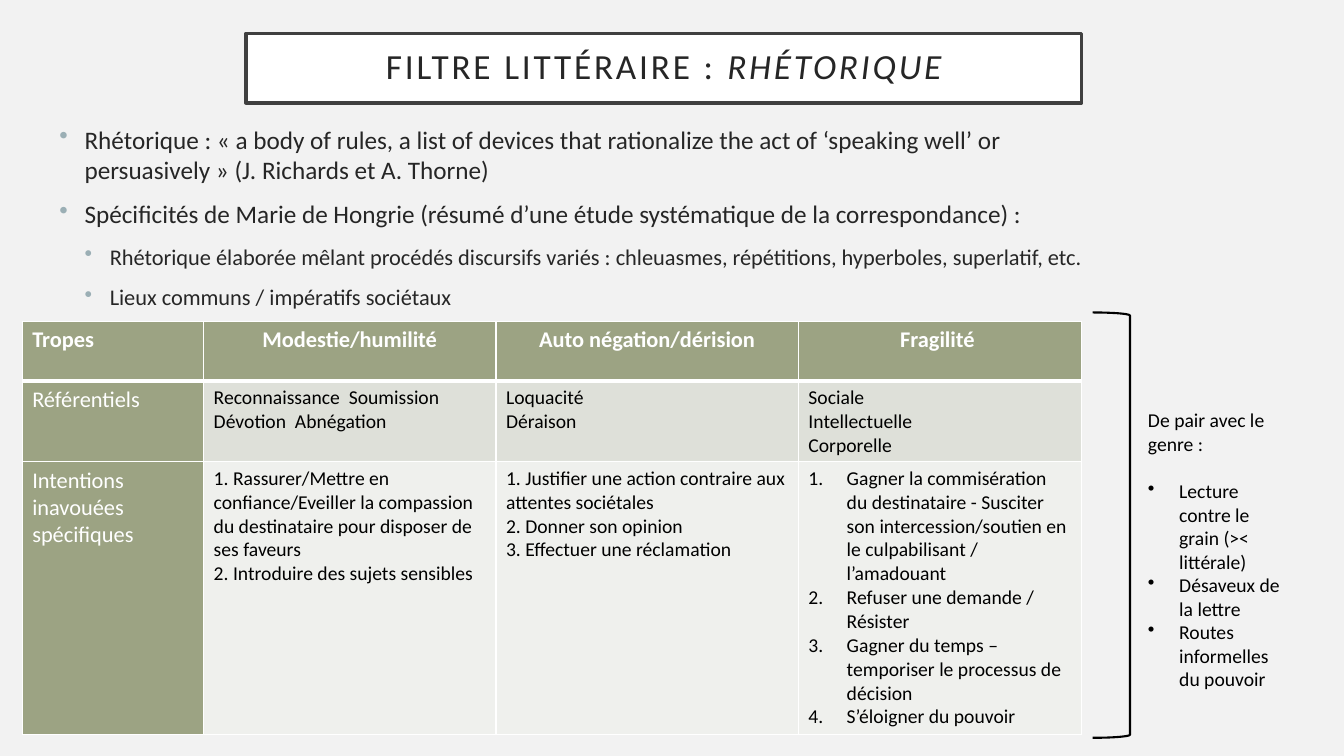
from lxml import etree
from pptx import Presentation
from pptx.dml.color import RGBColor
from pptx.enum.shapes import MSO_SHAPE
from pptx.enum.text import MSO_ANCHOR, PP_ALIGN
from pptx.oxml.ns import qn
from pptx.util import Inches, Pt

RECTANGLE, BRACKET = MSO_SHAPE.RECTANGLE, MSO_SHAPE.RIGHT_BRACKET
LEFT, CENTER = PP_ALIGN.LEFT, PP_ALIGN.CENTER
MIDDLE = MSO_ANCHOR.MIDDLE
BLANK_LAYOUT = 6
WIDTH, HEIGHT = Inches(13.33), Inches(7.5)
FONT = "Calibri"
WHITE, BLACK, INK, OUTLINE = "FFFFFF", "000000", "262626", "404040"
PAPER, BULLET, SAGE = "F2F2F2", "9BAFB5", "9CA383"
BAND_FILLS = (SAGE, "DEE0D9", "EFF0ED")
COLUMN_WEIGHTS = (1.8, 2.9, 3, 2.81)
ROW_WEIGHTS = (0.59, 0.8, 2.71)

POINTS = [
    (0, "Rhétorique : « a body of rules, a list of devices that rationalize the act of "
        "‘speaking well’ or persuasively » (J. Richards et A. Thorne)"),
    (0, "Spécificités de Marie de Hongrie (résumé d’une étude systématique de la correspondance) :"),
    (1, "Rhétorique élaborée mêlant procédés discursifs variés : chleuasmes, répétitions, "
        "hyperboles, superlatif, etc."),
    (1, "Lieux communs / impératifs sociétaux"),
]
TROPES = [
    [["Tropes"], ["Modestie/humilité"], ["Auto négation/dérision"], ["Fragilité "]],
    [["Référentiels"],
     ["Reconnaissance  Soumission  Dévotion  Abnégation"],
     ["Loquacité", "Déraison"],
     ["Sociale", "Intellectuelle", "Corporelle"]],
    [["Intentions inavouées spécifiques"],
     ["1. Rassurer/Mettre en confiance/Eveiller la compassion du destinataire pour disposer "
      "de ses faveurs",
      "2. Introduire des sujets sensibles"],
     ["1. Justifier une action contraire aux attentes sociétales",
      "2. Donner son opinion",
      "3. Effectuer une réclamation"],
     ["Gagner la commisération du destinataire - Susciter son intercession/soutien en le "
      "culpabilisant / l’amadouant",
      "Refuser une demande / Résister",
      "Gagner du temps – temporiser le processus de décision",
      "S’éloigner du pouvoir"]],
]
GENDER_READINGS = [
    "Lecture contre le grain (>< littérale)",
    "Désaveux de la lettre",
    "Routes informelles du pouvoir",
]


def color(hex_code):
    """Turn a hex string into a colour."""
    return RGBColor.from_string(hex_code)


def area(left, top, width, height):
    """Turn percentages of the slide into a box."""
    return tuple(int(share * side / 100) for share, side in
                 zip((left, top, width, height), (WIDTH, HEIGHT) * 2))


def write(paragraph, text, size=14, ink=BLACK, bold=False, italic=False, tracking=0,
          align=LEFT, before=0):
    """Add one formatted run to a paragraph."""
    paragraph.alignment = align
    paragraph.space_before = Pt(before)
    run = paragraph.add_run()
    run.text = text
    font = run.font
    font.name, font.size, font.bold, font.italic = FONT, Pt(size), bold, italic
    font.color.rgb = color(ink)
    if tracking:
        run._r.get_or_add_rPr().set("spc", str(tracking * 100))


def mark(paragraph, margin, hang, tint=BLACK, numbered=False):
    """Give a paragraph a hanging bullet or number."""
    properties = paragraph._p.get_or_add_pPr()
    properties.set("marL", str(Inches(margin)))
    properties.set("indent", str(-Inches(hang)))
    bullet_color = etree.SubElement(properties, qn("a:buClr"))
    etree.SubElement(bullet_color, qn("a:srgbClr"), val=tint)
    if numbered:
        etree.SubElement(properties, qn("a:buAutoNum"), type="arabicPeriod")
    else:
        etree.SubElement(properties, qn("a:buChar"), char="•")


def paragraphs(frame, count):
    """Return the given number of paragraphs of a wrapping text frame."""
    frame.word_wrap = True
    return [frame.paragraphs[0]] + [frame.add_paragraph() for _ in range(count - 1)]


def add_outline(slide, box, kind, line, weight, fill=None):
    """Draw a shape with a plain outline."""
    shape = slide.shapes.add_shape(kind, *box)
    shape.shadow.inherit = False
    if fill:
        shape.fill.solid()
        shape.fill.fore_color.rgb = color(fill)
    else:
        shape.fill.background()
    shape.line.color.rgb = color(line)
    shape.line.width = Pt(weight)
    return shape


def add_title(slide, box):
    """Place the framed title."""
    frame = add_outline(slide, box, RECTANGLE, OUTLINE, 2.5, WHITE).text_frame
    frame.vertical_anchor = MIDDLE
    frame.margin_left = frame.margin_right = Inches(0.2)
    frame.margin_top = frame.margin_bottom = Inches(0.2)
    heading = paragraphs(frame, 1)[0]
    heading.line_spacing = 0.9
    for text, italic in (("FILTRE LITTÉRAIRE : ", False), ("RHÉTORIQUE", True)):
        write(heading, text, size=25.2, ink=INK, italic=italic, tracking=2, align=CENTER)


def add_points(slide, box):
    """Place the two-level list of points."""
    frame = slide.shapes.add_textbox(*box).text_frame
    for paragraph, (level, text) in zip(paragraphs(frame, len(POINTS)), POINTS):
        paragraph.level = level
        write(paragraph, text, size=18 - 2 * level, ink=INK, before=10)
        mark(paragraph, 0.25 * (level + 1), 0.25, BULLET)


def add_border(cell, edge, weight):
    """Draw one white cell border."""
    line = etree.Element(qn("a:" + edge), w=str(Pt(weight)))
    fill = etree.SubElement(line, qn("a:solidFill"))
    etree.SubElement(fill, qn("a:srgbClr"), val=WHITE)
    cell._tc.get_or_add_tcPr().append(line)


def fill_cell(cell, texts, row, column):
    """Write, border and colour one cell of the tropes table."""
    header, label = row == 0, row == 0 or column == 0
    numbered = row == 2 and column == 3
    for edge in ("lnL", "lnR", "lnT", "lnB"):
        thick = (header and edge == "lnB") or (row == 1 and edge == "lnT")
        add_border(cell, edge, 3 if thick else 1)
    cell.fill.solid()
    cell.fill.fore_color.rgb = color(SAGE if label else BAND_FILLS[row])
    for paragraph, text in zip(paragraphs(cell.text_frame, len(texts)), texts):
        write(paragraph, text, size=16 if label else 14, ink=WHITE if label else BLACK,
              bold=header, align=CENTER if header and column else LEFT)
        if numbered:
            mark(paragraph, 0.38, 0.38, numbered=True)


def add_tropes(slide, box):
    """Place the table of tropes."""
    table = slide.shapes.add_table(len(ROW_WEIGHTS), len(COLUMN_WEIGHTS), *box).table
    for column, weight in zip(table.columns, COLUMN_WEIGHTS):
        column.width = int(box[2] * weight / sum(COLUMN_WEIGHTS))
    for row, weight in zip(table.rows, ROW_WEIGHTS):
        row.height = int(box[3] * weight / sum(ROW_WEIGHTS))
    for row, entries in enumerate(TROPES):
        for column, texts in enumerate(entries):
            fill_cell(table.cell(row, column), texts, row, column)


def add_gender_note(slide, box):
    """Place the note on gender beside the bracket."""
    frame = slide.shapes.add_textbox(*box).text_frame
    lead, *items = paragraphs(frame, len(GENDER_READINGS) + 1)
    write(lead, "De pair avec le genre :")
    for index, (item, text) in enumerate(zip(items, GENDER_READINGS)):
        write(item, text, before=0 if index else 17)
        mark(item, 0.31, 0.31)


def main():
    """Build the slide and save it."""
    deck = Presentation()
    deck.slide_width, deck.slide_height = WIDTH, HEIGHT
    slide = deck.slides.add_slide(deck.slide_layouts[BLANK_LAYOUT])
    slide.background.fill.solid()
    slide.background.fill.fore_color.rgb = color(PAPER)
    add_title(slide, area(18.3, 4.4, 62.18, 9.2))
    add_points(slide, area(3.68, 15.73, 79.65, 72.53))
    add_tropes(slide, area(1.65, 42.53, 78.83, 54.67))
    add_outline(slide, area(81.3, 41.33, 2.78, 56.27), BRACKET, BLACK, 1.5)
    add_gender_note(slide, area(84.68, 53.33, 11.63, 39.07))
    deck.save("out.pptx")


if __name__ == "__main__":
    main()
